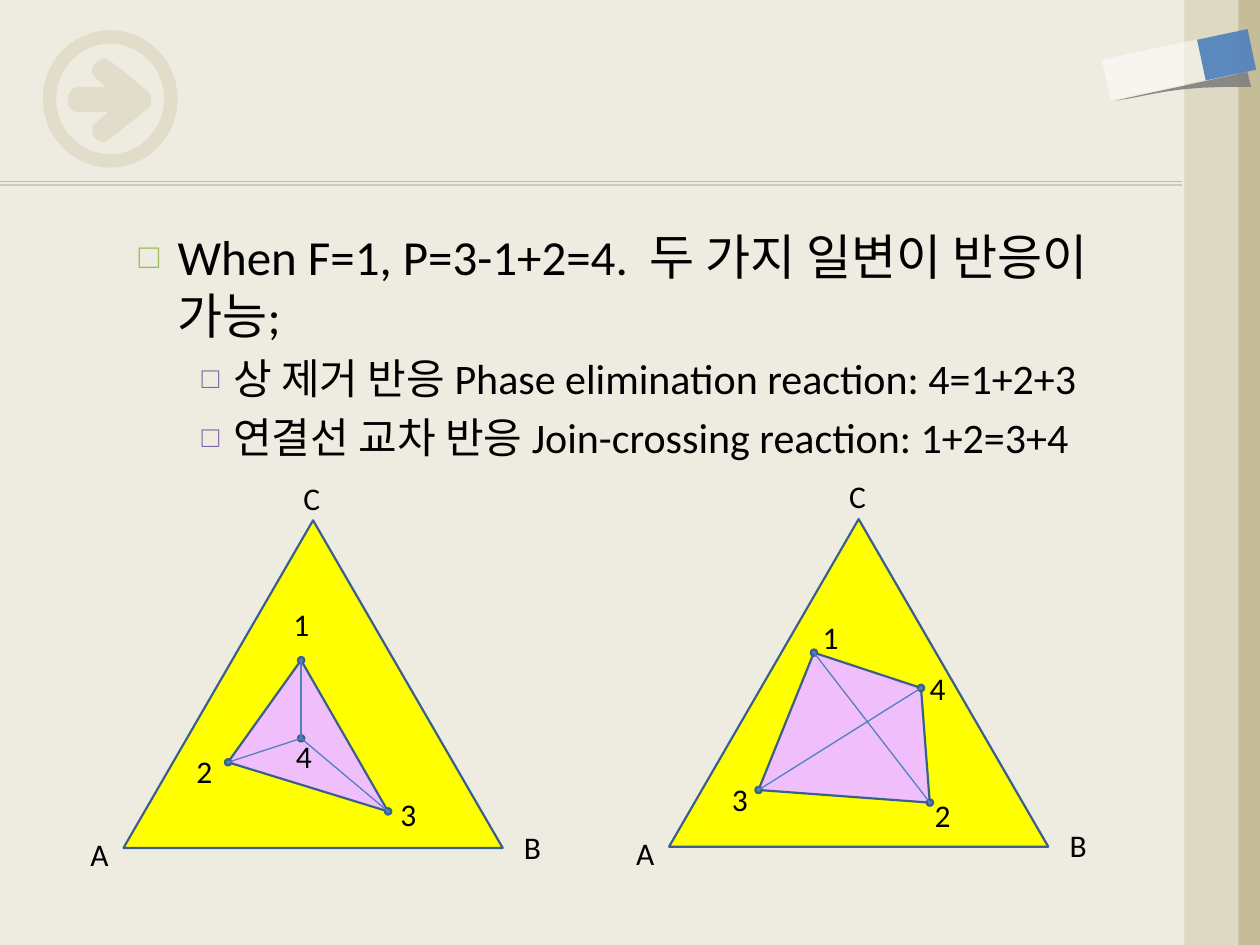
from lxml import etree
from pptx import Presentation
from pptx import util as u
from pptx.dml.color import RGBColor
from pptx.enum import shapes as s
from pptx.enum import text as t
from pptx.oxml import ns

CREAM = RGBColor(0xEE, 0xEC, 0xE1)
TAN = RGBColor(0xC4, 0xBD, 0x97)
SAND = RGBColor(0xDD, 0xD9, 0xC3)
GREY = RGBColor(0x80, 0x80, 0x80)
WHITE = RGBColor(0xFF, 0xFF, 0xFF)
BLACK = RGBColor(0, 0, 0)
BLUE = RGBColor(0x4F, 0x81, 0xBD)
NAVY = RGBColor(0x3A, 0x5F, 0x8C)
GOLD = RGBColor(0xFF, 0xFF, 0)
PINK = RGBColor(0xF0, 0xBE, 0xFA)
GREEN = RGBColor(0x9B, 0xBB, 0x59)
PLUM = RGBColor(0x80, 0x64, 0xA2)

FONT = "Calibri"
WIDE, HIGH = u.Inches(10), u.Inches(7.5)
CELL = WIDE // 100
KIND = s.MSO_SHAPE

ITEMS = [
    (1, 28, 8.1, 3.1, GREEN, "When F=1, P=3-1+2=4.  두 가지 일변이 반응이 가능;"),
    (2, 24, 12.5, 2.5, PLUM, "상 제거 반응 Phase elimination reaction: 4=1+2+3"),
    (2, 24, 12.5, 2.5, PLUM, "연결선 교차 반응 Join-crossing reaction: 1+2=3+4"),
]
CORNERS = {"A": (-3.6, 24.5), "B": (30.8, 23.9), "C": (13.3, -3.8)}

INNER = {
    "1": ((14.1, 11.1), (-1.6, -4.9)),
    "2": ((8.3, 19.2), (-3.5, -1.3)),
    "3": ((21, 23.1), (0, -1.8)),
    "4": ((14.1, 17.3), (-1.4, -0.6)),
}
CROSS = {
    "1": ((11.5, 10.6), (-0.3, -3.2)),
    "2": ((20.7, 22.5), (-0.6, -1)),
    "3": ((7.1, 21.5), (-3.1, -1.3)),
    "4": ((20, 13.4), (-0.3, -2)),
}

ARROW = [
    [(11.8, 7.3)],
    [(11.2, 6.8), (9.2, 5.1), (8.5, 4.7)],
    [(8.1, 4.6), (7.9, 4.8), (7.6, 5)],
    [(7.3, 5.2), (7.2, 5.7), (7.5, 6.1)],
    [(8.4, 6.9)],
    [(6.1, 6.9)],
    [(5.5, 7.1), (5.4, 7.6), (5.4, 7.9)],
    [(5.3, 8.3), (5.6, 8.8), (6.1, 8.9)],
    [(8.6, 8.9)],
    [(7.4, 9.9)],
    [(7.3, 10.2), (7.3, 10.7), (7.5, 10.9)],
    [(7.7, 11.1), (8, 11.3), (8.4, 11.3)],
    [(10.1, 9.9), (11.9, 8.5), (11.9, 8.5)],
    [(12.1, 8.2), (12, 8.1), (12, 7.9)],
    [(12, 7.7), (12, 7.5), (11.8, 7.3)],
]
SHADE = [
    [(99, 5.7)],
    [(99.3, 6.9)],
    [(92.8, 6.8), (91.5, 7.6), (88.5, 8)],
    [(92, 7.2), (95.5, 6.5), (99, 5.7)],
]


def grid(*nums):
    return [u.Emu(round(n * CELL)) for n in nums]


def move(a, b):
    return a[0] + b[0], a[1] + b[1]


def paint(shape, color, edge=None, alpha=None):
    shape.shadow.inherit = False
    shape.fill.solid()
    shape.fill.fore_color.rgb = color
    if alpha:
        tone = shape._element.xpath("./p:spPr/a:solidFill/a:srgbClr")[0]
        etree.SubElement(tone, ns.qn("a:alpha"), val=str(alpha * 1000))
    if edge:
        shape.line.color.rgb = edge
        shape.line.width = u.Pt(1.25)
    else:
        shape.line.fill.background()
    return shape


def block(slide, kind, box, color, **style):
    return paint(slide.shapes.add_shape(kind, *grid(*box)), color, **style)


def outline(slide, points, color, **style):
    first, *rest = [grid(*p) for p in points]
    pen = slide.shapes.build_freeform(*first, scale=1.0)
    pen.add_line_segments(rest, close=True)
    return paint(pen.convert_to_shape(), color, **style)


def bend(parts, steps=8):
    points = []
    for part in parts:
        if len(part) == 1:
            points += part
            continue
        knots = [points[-1], *part]
        for i in range(1, steps + 1):
            k = i / steps
            mix = ((1 - k) ** 3, 3 * k * (1 - k) ** 2, 3 * k * k * (1 - k), k ** 3)
            points.append(tuple(sum(m * p[j] for m, p in zip(mix, knots)) for j in (0, 1)))
    return points


def line(slide, start, end, color):
    link = slide.shapes.add_connector(s.MSO_CONNECTOR.STRAIGHT, *grid(*start, *end))
    link.line.color.rgb = color
    link.line.width = u.Pt(0.75)
    return etree.SubElement(link._element.spPr, ns.qn("a:effectLst"))


def write(para, words, size):
    run = para.add_run()
    run.text = words
    run.font.size = u.Pt(size)
    run.font.name = FONT
    run.font.color.rgb = BLACK


def label(slide, spot, words):
    box = slide.shapes.add_textbox(*grid(*spot, 3.3, 4))
    frame = box.text_frame
    frame.word_wrap = False
    frame.auto_size = t.MSO_AUTO_SIZE.SHAPE_TO_FIT_TEXT
    write(frame.paragraphs[0], words, 18)


def bullet(para, color, left, hang):
    props = para._p.get_or_add_pPr()
    props.set("marL", str(round(left * CELL)))
    props.set("indent", str(round(-hang * CELL)))
    tint = etree.SubElement(props, ns.qn("a:buClr"))
    etree.SubElement(tint, ns.qn("a:srgbClr"), val=str(color))
    etree.SubElement(props, ns.qn("a:buSzPct"), val="70000")
    etree.SubElement(props, ns.qn("a:buChar"), char="□")


def body(slide):
    title = slide.shapes.title._element
    title.getparent().remove(title)
    hold = slide.placeholders[1]
    hold.left, hold.top, hold.width, hold.height = grid(5, 17.5, 88.7, 49.5)
    frame = hold.text_frame
    frame.auto_size = t.MSO_AUTO_SIZE.NONE
    for i, (level, size, left, hang, color, words) in enumerate(ITEMS):
        para = frame.add_paragraph() if i else frame.paragraphs[0]
        para.level = level
        bullet(para, color, left, hang)
        write(para, words, size)


def decor(slide):
    effect = line(slide, (0, 14.4), (93.8, 14.4), TAN)
    drop = etree.SubElement(effect, ns.qn("a:outerShdw"), dist="25400", dir="5400000")
    tone = etree.SubElement(drop, ns.qn("a:srgbClr"), val=str(BLACK))
    etree.SubElement(tone, ns.qn("a:alpha"), val="22000")
    outline(slide, bend(ARROW), TAN, alpha=30)
    ring = block(slide, KIND.DONUT, (3.4, 2.4, 10.7, 10.9), TAN, alpha=30)
    ring.adjustments[0] = 0.1
    block(slide, KIND.RECTANGLE, (94.1, 0, 5.9, 75), TAN)
    block(slide, KIND.RECTANGLE, (94, 0, 4.3, 75), SAND)
    outline(slide, bend(SHADE), GREY, alpha=90)
    for box, color, alpha in (((95.7, 2.3, 3.3, 4.1), BLUE, 90), ((89.9, 1.7, 3.3, 7.7), WHITE, 50)):
        block(slide, KIND.RECTANGLE, box, color, alpha=alpha).rotation = 78


def figure(slide, base, nodes, ring, links):
    block(slide, KIND.ISOSCELES_TRIANGLE, (*base, 30.1, 26), GOLD, edge=NAVY)
    spots = {name: move(base, spot) for name, (spot, _) in nodes.items()}
    outline(slide, [spots[name] for name in ring], PINK, edge=NAVY)
    for spot in spots.values():
        block(slide, KIND.OVAL, (*move(spot, (-0.25, -0.25)), 0.5, 0.5), BLUE, edge=NAVY)
    for start, end in links:
        line(slide, spots[start], spots[end], BLUE)
    for name, (_, shift) in nodes.items():
        label(slide, move(spots[name], shift), name)
    for name, shift in CORNERS.items():
        label(slide, move(base, shift), name)


def main():
    deck = Presentation()
    deck.slide_width, deck.slide_height = WIDE, HIGH
    slide = deck.slides.add_slide(deck.slide_layouts[1])
    slide.background.fill.solid()
    slide.background.fill.fore_color.rgb = CREAM
    body(slide)
    decor(slide)
    figure(slide, (9.8, 41.3), INNER, "123", ("41", "42", "43"))
    figure(slide, (53.1, 41.2), CROSS, "1423", ("12", "34"))
    deck.save("out.pptx")


if __name__ == "__main__":
    main()
